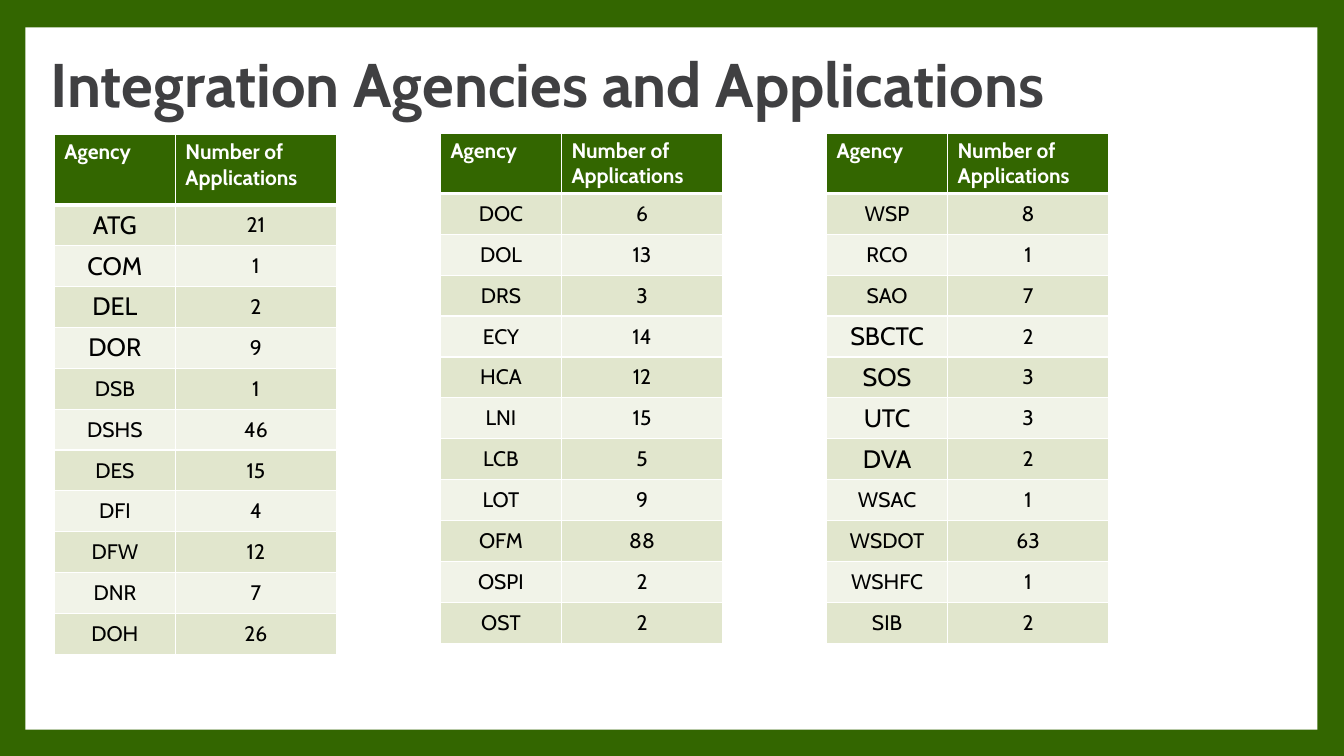
from lxml.etree import SubElement
from pptx import Presentation
from pptx.dml.color import RGBColor
from pptx.enum.shapes import MSO_SHAPE
from pptx.enum.text import MSO_ANCHOR, PP_ALIGN
from pptx.oxml.ns import qn
from pptx.util import Cm, Pt

GREEN = RGBColor(0x33, 0x66, 0x00)
WHITE = RGBColor(0xFF, 0xFF, 0xFF)
BLACK = RGBColor(0x00, 0x00, 0x00)
GREY = RGBColor(0x40, 0x40, 0x42)
BANDS = RGBColor(0xE1, 0xE6, 0xCD), RGBColor(0xF1, 0xF3, 0xE8)

FONT = "Cabin"
COLS = 3.05, 4.06
ROW = 1.03
PITCH = 9.73
HEADS = "Agency", "Number of Applications"
LARGE = {"ATG", "COM", "DEL", "DOR", "SBCTC", "SOS", "UTC", "DVA"}

LISTS = [
    [("ATG", 21), ("COM", 1), ("DEL", 2), ("DOR", 9), ("DSB", 1), ("DSHS", 46),
     ("DES", 15), ("DFI", 4), ("DFW", 12), ("DNR", 7), ("DOH", 26)],
    [("DOC", 6), ("DOL", 13), ("DRS", 3), ("ECY", 14), ("HCA", 12), ("LNI", 15),
     ("LCB", 5), ("LOT", 9), ("OFM", 88), ("OSPI", 2), ("OST", 2)],
    [("WSP", 8), ("RCO", 1), ("SAO", 7), ("SBCTC", 2), ("SOS", 3), ("UTC", 3),
     ("DVA", 2), ("WSAC", 1), ("WSDOT", 63), ("WSHFC", 1), ("SIB", 2)],
]


def write(frame, text, size=15, color=BLACK, bold=False, align=PP_ALIGN.LEFT, space=1.0):
    """Put formatted text into the first paragraph of a frame."""
    frame.word_wrap = True
    para = frame.paragraphs[0]
    para.alignment = align
    para.line_spacing = space
    run = para.add_run()
    run.text = text
    run.font.name = FONT
    run.font.size = Pt(size)
    run.font.bold = bold
    run.font.color.rgb = color


def edge(cell, top, base):
    """Draw white borders on a cell with the given top and base widths."""
    props = cell._tc.get_or_add_tcPr()
    for side, width in (("lnL", 1), ("lnR", 1), ("lnT", top), ("lnB", base)):
        line = SubElement(props, qn(f"a:{side}"), w=str(Pt(width)))
        fill = SubElement(line, qn("a:solidFill"))
        SubElement(fill, qn("a:srgbClr"), val=str(WHITE))


def paint(cell, color):
    """Fill a cell with a plain colour."""
    cell.fill.solid()
    cell.fill.fore_color.rgb = color


def add_panel(slide, left, top, width, height):
    """Add the white panel inside the green frame."""
    panel = slide.shapes.add_shape(
        MSO_SHAPE.RECTANGLE, Cm(left), Cm(top), Cm(width), Cm(height))
    panel.shadow.inherit = False
    panel.fill.solid()
    panel.fill.fore_color.rgb = WHITE
    panel.line.fill.background()


def add_title(slide, left, top, width, height):
    """Add the slide title."""
    frame = slide.shapes.add_textbox(Cm(left), Cm(top), Cm(width), Cm(height)).text_frame
    frame.vertical_anchor = MSO_ANCHOR.MIDDLE
    write(frame, "Integration Agencies and Applications",
          size=44, color=GREY, bold=True, space=0.9)


def add_list(slide, pairs, left, top, head):
    """Add one table of agencies whose header row has the given height."""
    table = slide.shapes.add_table(
        len(pairs) + 1, len(COLS), Cm(left), Cm(top),
        Cm(sum(COLS)), Cm(head + ROW * len(pairs))).table
    for col, width in zip(table.columns, COLS):
        col.width = Cm(width)
    for num, row in enumerate(table.rows):
        row.height = Cm(ROW if num else head)
    for col, text in enumerate(HEADS):
        cell = table.cell(0, col)
        edge(cell, 1, 3)
        paint(cell, GREEN)
        write(cell.text_frame, text, color=WHITE, bold=True)
    for num, (name, count) in enumerate(pairs, 1):
        sizes = 18 if name in LARGE else 15, 15
        for col, text in enumerate((name, str(count))):
            cell = table.cell(num, col)
            edge(cell, 3 if num == 1 else 1, 1)
            paint(cell, BANDS[(num - 1) % 2])
            cell.vertical_anchor = MSO_ANCHOR.MIDDLE
            write(cell.text_frame, text, size=sizes[col], align=PP_ALIGN.CENTER)


def main():
    """Build the slide and save it."""
    deck = Presentation()
    deck.slide_width, deck.slide_height = Cm(33.87), Cm(19.05)
    slide = deck.slides.add_slide(deck.slide_layouts[6])
    back = slide.background.fill
    back.solid()
    back.fore_color.rgb = GREEN
    add_panel(slide, 0.64, 0.69, 32.56, 17.7)
    add_title(slide, 1.02, 1.24, 27.25, 1.93)
    tops = 3.39, 3.35, 3.35
    heads = 1.77, 1.52, 1.52
    for num, (pairs, top, head) in enumerate(zip(LISTS, tops, heads)):
        add_list(slide, pairs, 1.37 + num * PITCH, top, head)
    deck.save("out.pptx")


if __name__ == "__main__":
    main()
